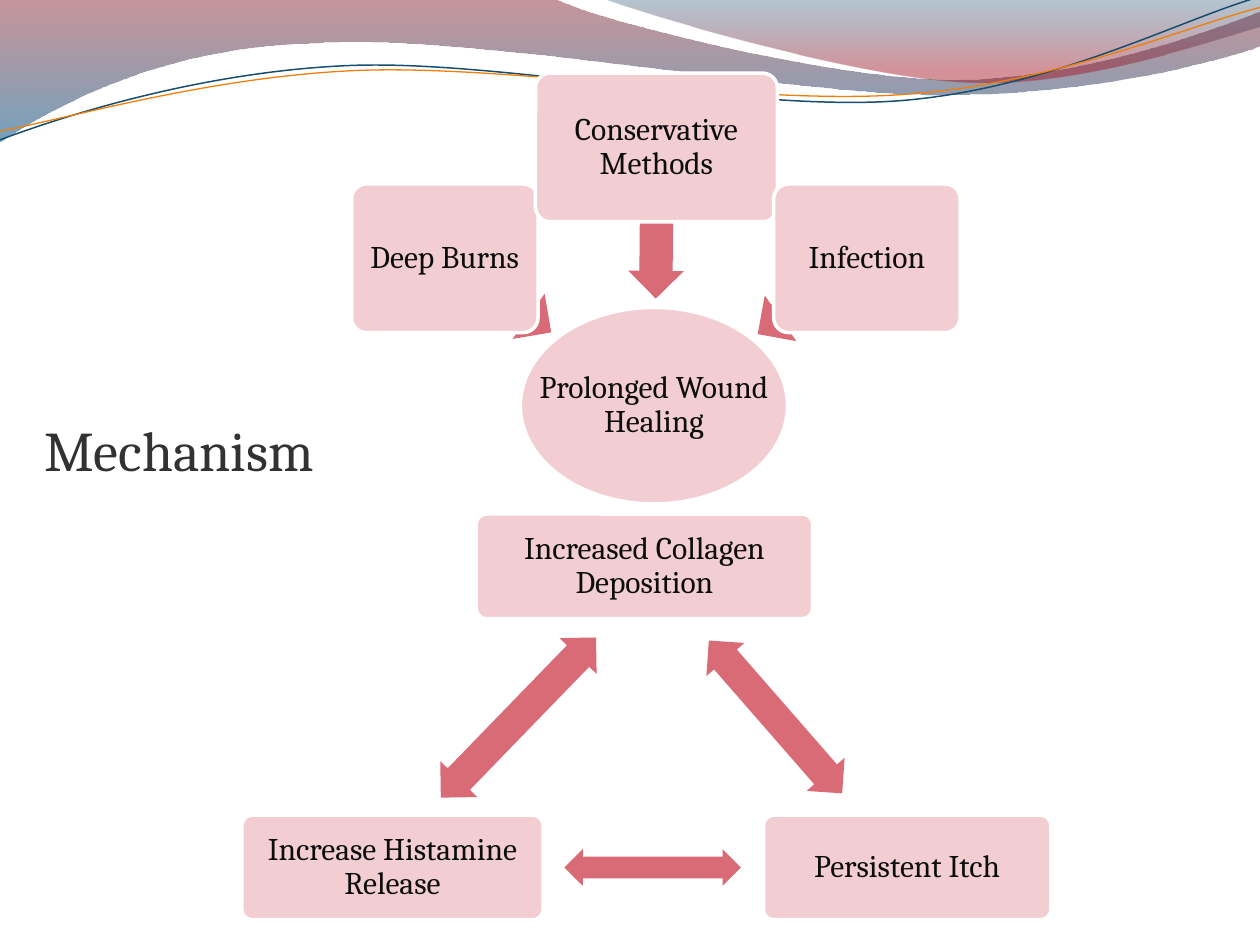
import math

import lxml.etree
import pptx
import pptx.dml.color
import pptx.enum.shapes
import pptx.enum.text
import pptx.oxml.ns
import pptx.util

Inches = pptx.util.Inches
Pt = pptx.util.Pt
qn = pptx.oxml.ns.qn
RGBColor = pptx.dml.color.RGBColor
Shape = pptx.enum.shapes.MSO_SHAPE
Align = pptx.enum.text.PP_ALIGN
Anchor = pptx.enum.text.MSO_ANCHOR

PINK = RGBColor(0xF2, 0xCE, 0xD2)
ROSE = RGBColor(0xD9, 0x6B, 0x77)
WHITE = RGBColor(0xFF, 0xFF, 0xFF)
INK = RGBColor(0x0D, 0x0D, 0x0D)
TITLE_GREY = RGBColor(0x32, 0x32, 0x32)
WINE = RGBColor(0x7E, 0x16, 0x21)
BLUE = RGBColor(0x00, 0x56, 0x89)
NAVY = RGBColor(0x09, 0x44, 0x67)
RED = RGBColor(0xA1, 0x0F, 0x1F)
STEEL = RGBColor(0x18, 0x4E, 0x6D)
ORANGE = RGBColor(0xF0, 0x7F, 0x09)

FONT = "Cambria"
NODE_FONT = {"name": FONT, "size": Pt(18)}
TITLE_FONT = {"name": FONT, "size": Pt(32), "bold": False}
NODE_PARAGRAPH = {"alignment": Align.CENTER, "line_spacing": 0.9}
STRAND_ROTATION = 357.3

BANDS = [
    ([[(0, 0)], [(4.4, -0.01)],
      [(4.76, 0.17), (6.64, 0.63), (7.58, 0.63)],
      [(8.53, 0.63), (9.58, 0.26), (10, 0.09)], [(10.01, 0.36)],
      [(9.83, 0.44), (8.7, 0.76), (7.46, 0.75)],
      [(6.22, 0.75), (3.82, 0.28), (2.57, 0.34)],
      [(1.29, 0.36), (0.46, 0.83), (-0.01, 1.13)], [(0, 0)]],
     [(0, WINE, 45), (1, BLUE, 55)]),
    ([[(4.79, -0.01)],
      [(5.09, 0.11), (6.82, 0.62), (7.69, 0.65)],
      [(8.56, 0.69), (9.61, 0.32), (10, 0.21)], [(10, 0)], [(4.79, -0.01)]],
     [(0, NAVY, 30), (0.8, RED, 45)]),
]
STRANDS = [
    ([[(0, 1.11)],
      [(0.48, 0.93), (1.58, 0.57), (2.77, 0.52)],
      [(3.95, 0.47), (5.93, 0.89), (7.13, 0.8)],
      [(8.33, 0.71), (9.38, 0.15), (9.98, -0.02)]], (4.99, 0.57), STEEL, 0.85),
    ([[(0, 1.04)],
      [(0.47, 0.96), (1.64, 0.61), (2.83, 0.56)],
      [(4.03, 0.51), (5.97, 0.84), (7.17, 0.75)],
      [(8.36, 0.67), (9.41, 0.21), (10, 0.06)]], (5, 0.59), ORANGE, 0.75),
]


def set_values(target, values):
    for name, value in values.items():
        setattr(target, name, value)


def turn(point, center, degrees):
    angle = math.radians(degrees)
    x, y = point[0] - center[0], point[1] - center[1]
    return (center[0] + x * math.cos(angle) - y * math.sin(angle),
            center[1] + x * math.sin(angle) + y * math.cos(angle))


def add_curve(slide, box, segments, close):
    points = [(Inches(box[0] + x), Inches(box[1] + y)) for segment in segments for x, y in segment]
    builder = slide.shapes.build_freeform(*points[0])
    builder.add_line_segments(points[1:], close=close)
    curve = builder.convert_to_shape()
    curve.shadow.inherit = False
    lines = iter(list(curve.element.spPr.iter(qn("a:lnTo"))))
    for segment in segments[1:]:
        first, *others = [next(lines) for _ in segment]
        if others:
            bend = lxml.etree.Element(qn("a:cubicBezTo"))
            first.addprevious(bend)
            for line in (first, *others):
                bend.append(line[0])
                line.getparent().remove(line)
    return curve


def add_waves(slide, box):
    for segments, stops in BANDS:
        band = add_curve(slide, box, segments, True)
        band.line.fill.background()
        band.fill.gradient()
        band.fill.gradient_angle = 270
        for stop, (position, color, _) in zip(band.fill.gradient_stops, stops):
            stop.position = position
            stop.color.rgb = color
        colors = band.element.spPr.iter(qn("a:srgbClr"))
        for color, (_, _, opacity) in zip(colors, stops):
            alpha = lxml.etree.SubElement(color, qn("a:alpha"))
            alpha.set("val", str(opacity * 1000))
    for segments, center, color, width in STRANDS:
        level = [[turn(point, center, -STRAND_ROTATION) for point in segment] for segment in segments]
        strand = add_curve(slide, box, level, False)
        strand.rotation = STRAND_ROTATION
        strand.fill.background()
        strand.line.color.rgb = color
        strand.line.width = Pt(width)


def add_part(slide, box, kind, place, color):
    left, top, width, height = place
    part = slide.shapes.add_shape(kind, Inches(box[0] + left), Inches(box[1] + top),
                                  Inches(width), Inches(height))
    part.shadow.inherit = False
    part.fill.solid()
    part.fill.fore_color.rgb = color
    return part


def write_label(frame, wording, inset):
    margins = {f"margin_{side}": Inches(inset) for side in ("left", "top", "right", "bottom")}
    set_values(frame, {"word_wrap": True, "vertical_anchor": Anchor.MIDDLE, **margins})
    frame.text = wording
    paragraph = frame.paragraphs[0]
    set_values(paragraph, NODE_PARAGRAPH)
    set_values(paragraph.runs[0].font, NODE_FONT)
    paragraph.runs[0].font.color.rgb = INK


def add_node(slide, box, kind, place):
    node = add_part(slide, box, kind, place, PINK)
    node.line.color.rgb = WHITE
    node.line.width = Pt(2)
    return node


def add_card(slide, box, wording, place, inset):
    card = add_node(slide, box, Shape.ROUNDED_RECTANGLE, place)
    card.adjustments[0] = 0.1
    write_label(card.text_frame, wording, inset)


def add_arrow(slide, box, kind, place, rotation):
    arrow = add_part(slide, box, kind, place, ROSE)
    arrow.line.fill.background()
    arrow.rotation = rotation
    arrow.adjustments[0] = 0.6
    arrow.adjustments[1] = 0.5


def add_causes(slide, box):
    outcome = add_node(slide, box, Shape.OVAL, (1.34, 1.86, 2.12, 1.56))
    label = slide.shapes.add_textbox(outcome.left, outcome.top, outcome.width, outcome.height)
    write_label(label.text_frame, "Prolonged Wound Healing", 0.01)
    causes = [
        ("Deep Burns", (0, 0.88, 1.48, 1.18), (0.65, 1.54, 1.03, 0.44), 215.3),
        ("Conservative Methods", (1.46, 0, 1.92, 1.18), (1.82, 0.97, 1.2, 0.44), 270.5),
        ("Infection", (3.35, 0.88, 1.48, 1.18), (3.13, 1.55, 1.06, 0.44), 325.3),
    ]
    for wording, card_place, arrow_place, rotation in causes:
        add_arrow(slide, box, Shape.LEFT_ARROW, arrow_place, rotation)
        add_card(slide, box, wording, card_place, 0.04)


def add_itch_cycle(slide, box):
    effects = [
        ("Increased Collagen Deposition", (1.86, 0, 2.67, 0.83), (3.43, 1.41, 1.61, 0.4), 48.9),
        ("Persistent Itch", (4.14, 2.39, 2.28, 0.83), (2.56, 2.66, 1.4, 0.29), 180),
        ("Increase Histamine Release", (0, 2.39, 2.39, 0.83), (1.31, 1.41, 1.77, 0.41), 314.1),
    ]
    for wording, card_place, arrow_place, rotation in effects:
        add_card(slide, box, wording, card_place, 0.07)
        add_arrow(slide, box, Shape.LEFT_RIGHT_ARROW, arrow_place, rotation)


def add_title(slide, box):
    title = slide.shapes.title
    set_values(title, dict(zip(("left", "top", "width", "height"), map(Inches, box))))
    frame = title.text_frame
    set_values(frame, {"word_wrap": True, "vertical_anchor": Anchor.TOP,
                       "auto_size": pptx.enum.text.MSO_AUTO_SIZE.NONE})
    frame.text = "Mechanism"
    heading = frame.paragraphs[0]
    heading.alignment = Align.LEFT
    set_values(heading.runs[0].font, TITLE_FONT)
    heading.runs[0].font.color.rgb = TITLE_GREY


def main():
    deck = pptx.Presentation()
    set_values(deck, {"slide_width": Inches(10), "slide_height": Inches(7.5)})
    slide = deck.slides.add_slide(deck.slide_layouts[5])
    add_waves(slide, (0, 0))
    add_causes(slide, (2.79, 0.58))
    add_itch_cycle(slide, (1.92, 4.08))
    add_title(slide, (0.25, 3.25, 2.5, 0.83))
    deck.save("out.pptx")


if __name__ == "__main__":
    main()
